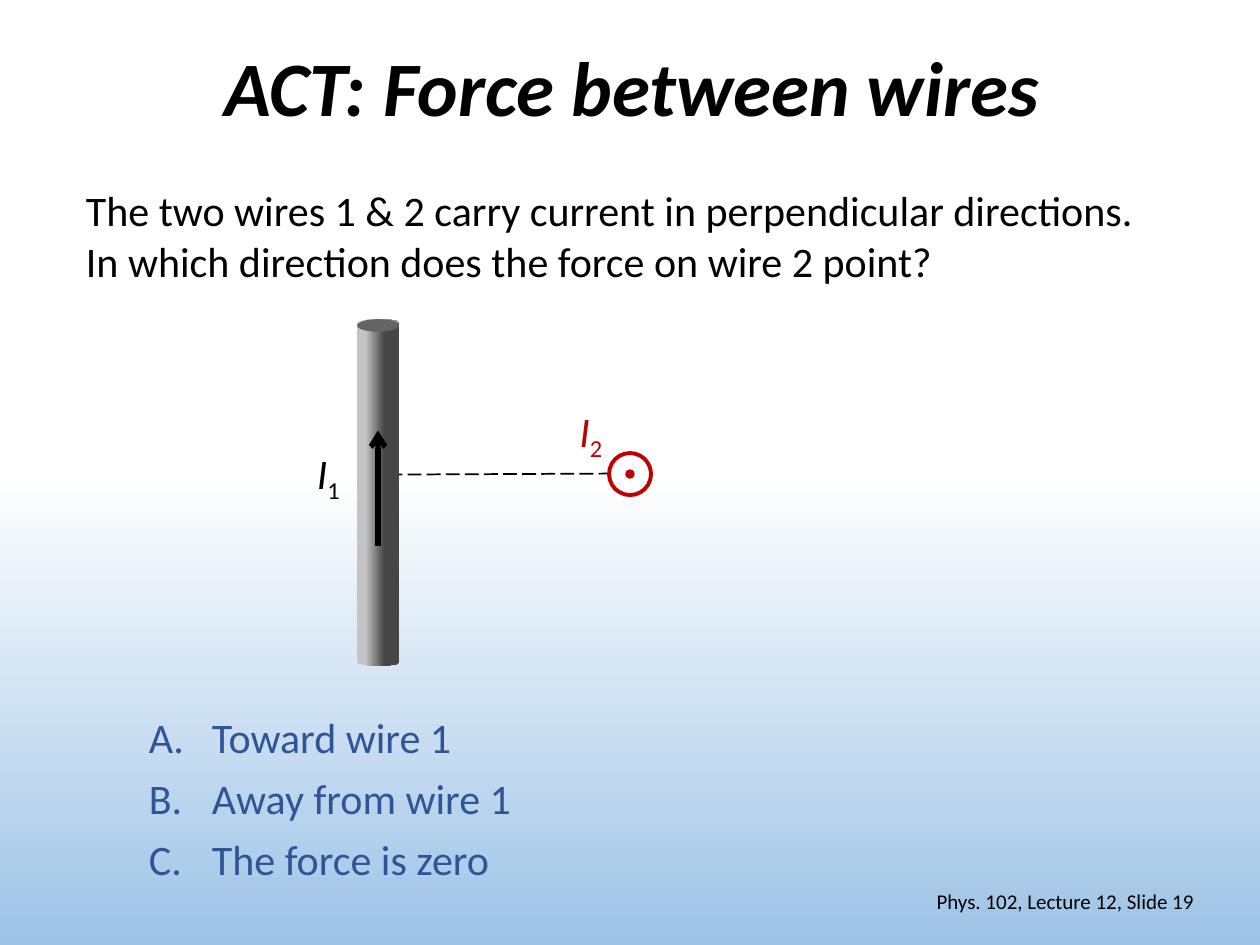
from lxml import etree
from pptx import Presentation, util as u
from pptx.dml.color import RGBColor
from pptx.enum import dml, shapes, text
from pptx.oxml.ns import qn

BLACK = RGBColor(0x00, 0x00, 0x00)
WHITE = RGBColor(0xFF, 0xFF, 0xFF)
SKY = RGBColor(0x9D, 0xC3, 0xE6)
RED = RGBColor(0xC0, 0x00, 0x00)
BLUE = RGBColor(0x2F, 0x55, 0x97)
LIGHT = RGBColor(0xC4, 0xC4, 0xC4)
DARK = RGBColor(0x46, 0x46, 0x46)
GREY = RGBColor(0x64, 0x64, 0x64)

MID = text.MSO_ANCHOR.MIDDLE
ALIGN = text.PP_ALIGN
KIND = shapes.MSO_SHAPE


def grid(*cells):
    """Turn grid steps of a twelfth of an inch into lengths."""
    return [u.Inches(cell / 12) for cell in cells]


def blend(fill, angle, *stops):
    fill.gradient()
    fill.gradient_angle = angle
    for stop, (place, color) in zip(fill.gradient_stops, stops):
        stop.position = place
        stop.color.rgb = color


class Deck:
    font = "Calibri"

    def __init__(self):
        self.prs = Presentation()
        self.prs.slide_width, self.prs.slide_height = grid(120, 90)
        self.slide = self.prs.slides.add_slide(self.prs.slide_layouts[6])
        blend(self.slide.background.fill, 270, (0.5, WHITE), (1, SKY))

    def style(self, run, size, color, bold=False, slant=False):
        font = run.font
        font.name, font.size = self.font, u.Pt(size)
        font.bold, font.italic = bold, slant
        font.color.rgb = color

    def box(self, area, lines, size=24, color=BLACK, bold=False, slant=False,
            align=ALIGN.LEFT, anchor=text.MSO_ANCHOR.TOP, wrap=True):
        frame = self.slide.shapes.add_textbox(*grid(*area)).text_frame
        frame.word_wrap = wrap
        frame.vertical_anchor = anchor
        frame.text = "\n".join(lines)
        for para in frame.paragraphs:
            para.alignment = align
            for run in para.runs:
                self.style(run, size, color, bold, slant)
        return frame

    def label(self, left, top, sub, color):
        """Write a current symbol I with its subscript."""
        frame = self.box((left, top, 4.8, 6), ["I"], color=color, slant=True,
                         wrap=False)
        run = frame.paragraphs[0].add_run()
        run.text = sub
        self.style(run, 24, color)
        run.font._element.set("baseline", "-25000")

    def choices(self, area, lines):
        for para in self.box(area, lines, color=BLUE).paragraphs:
            para.space_after = u.Pt(6)
            props = para._p.get_or_add_pPr()
            props.set("marL", str(u.Inches(0.5)))
            props.set("indent", str(-u.Inches(0.5)))
            mark = etree.SubElement(props, qn("a:buAutoNum"))
            mark.set("type", "alphaUcPeriod")

    def shape(self, kind, area, fill=None, line=None, width=1):
        item = self.slide.shapes.add_shape(kind, *grid(*area))
        item.shadow.inherit = False
        if fill is not None:
            item.fill.solid()
            item.fill.fore_color.rgb = fill
        if line is None:
            item.line.fill.background()
        else:
            item.line.color.rgb = line
            item.line.width = u.Pt(width)
        return item

    def rod(self, left, top, wide, high):
        body = self.shape(KIND.CAN, (left, top, wide, high))
        body.adjustments[0] = 0.15
        blend(body.fill, 0, (0.2, LIGHT), (0.65, DARK))
        self.shape(KIND.OVAL, (left, top, wide, 0.3 * wide), GREY)

    def ring(self, x, y, size, fill, width):
        area = (x - size / 2, y - size / 2, size, size)
        self.shape(KIND.OVAL, area, fill, RED, width)

    def line(self, ends, width, dash=None, head=False):
        item = self.slide.shapes.add_connector(
            shapes.MSO_CONNECTOR.STRAIGHT, *grid(*ends))
        item.line.color.rgb = BLACK
        item.line.width = u.Pt(width)
        if dash is not None:
            item.line.dash_style = dash
        if head:
            tip = etree.SubElement(item.line._get_or_add_ln(), qn("a:tailEnd"))
            tip.set("type", "arrow")
        etree.SubElement(item._element.spPr, qn("a:effectLst"))


def main():
    deck = Deck()
    title = deck.box((8.5, 0, 103.4, 17.4), ["ACT: Force between wires"], 44,
                     bold=True, slant=True, align=ALIGN.CENTER, anchor=MID)
    title.paragraphs[0].line_spacing = 0.9

    deck.line((37, 45.2, 59, 45.1), 1, dml.MSO_LINE.LONG_DASH)
    deck.label(54, 38, "2", RED)
    deck.ring(60, 45.15, 4, WHITE, 2.25)
    deck.ring(60, 45.15, 0.72, RED, 1)
    deck.rod(34, 30.4, 4, 33)
    deck.line((36, 52, 36, 41), 3, head=True)

    deck.box((7, 17, 106, 10.9), [
        "The two wires 1 & 2 carry current in perpendicular directions. "
        "In which direction does the force on wire 2 point?"])
    deck.box((84.7, 83.4, 30.2, 4.8), ["Phys. 102, Lecture 12, Slide 19"], 12,
             align=ALIGN.RIGHT, anchor=MID)
    deck.label(29, 42, "1", BLACK)
    deck.choices((13, 67.2, 47, 17.8), [
        "Toward wire 1", "Away from wire 1", "The force is zero"])
    deck.prs.save("out.pptx")


if __name__ == "__main__":
    main()
